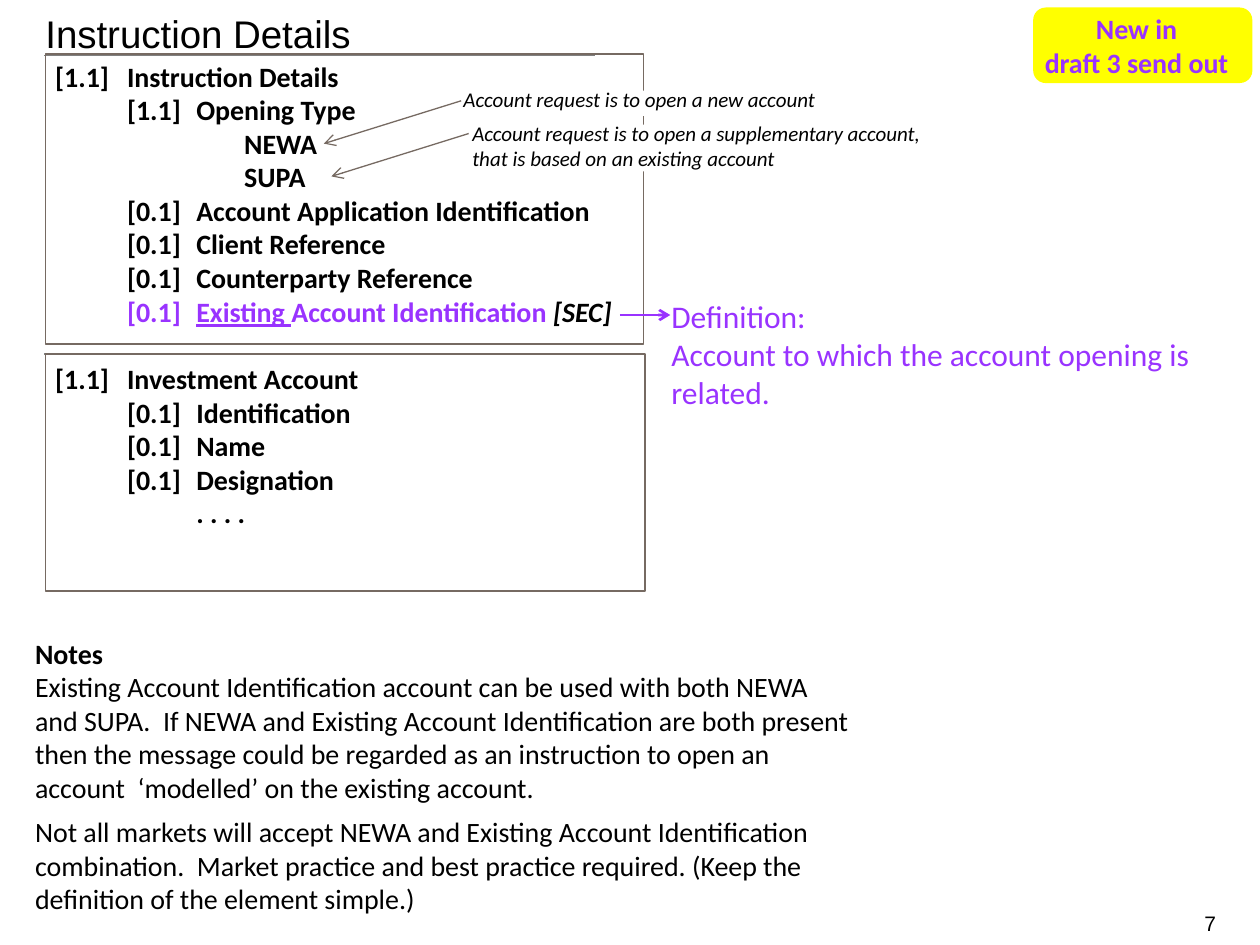
"""Build the Instruction Details slide with its message outline, callouts and notes."""
from dataclasses import dataclass
from typing import Optional

from lxml import etree
from pptx import Presentation
from pptx.dml.color import RGBColor
from pptx.enum.shapes import MSO_CONNECTOR, MSO_SHAPE
from pptx.enum.text import MSO_ANCHOR, PP_ALIGN
from pptx.oxml.ns import qn
from pptx.util import Pt

PX = 9144
BLACK = RGBColor(0, 0, 0)
WHITE = RGBColor(255, 255, 255)
YELLOW = RGBColor(255, 255, 0)
PURPLE = RGBColor(0x99, 0x33, 0xFF)
BROWN = RGBColor(0x76, 0x6A, 0x62)
GREY = RGBColor(0x80, 0x80, 0x80)
RECTANGLE, ROUNDED = MSO_SHAPE.RECTANGLE, MSO_SHAPE.ROUNDED_RECTANGLE
STRAIGHT = MSO_CONNECTOR.STRAIGHT
TOP, MIDDLE = MSO_ANCHOR.TOP, MSO_ANCHOR.MIDDLE
LEFT, CENTER, RIGHT = PP_ALIGN.LEFT, PP_ALIGN.CENTER, PP_ALIGN.RIGHT
TITLE_ONLY = 5
OUTLINE_TABS = (57, 112, 150)


@dataclass(frozen=True)
class Box:
    left: int
    top: int
    width: int
    height: int

    def emu(self) -> tuple[int, ...]:
        return tuple(v * PX for v in (self.left, self.top, self.width, self.height))


@dataclass(frozen=True)
class Style:
    size: int
    color: RGBColor = BLACK
    bold: bool = False
    italic: bool = False
    underline: bool = False
    font: str = "Calibri"


@dataclass(frozen=True)
class Line:
    start: tuple[int, int]
    end: tuple[int, int]
    color: RGBColor
    weight: float = 0.75
    arrow: bool = False


@dataclass(frozen=True)
class Callout:
    text: str
    box: Box
    arrow: Line


ENTRY = Style(16, bold=True)
NEW_ENTRY = Style(16, PURPLE, bold=True)
NOTE = Style(16)
REMARK = Style(12, italic=True)

INSTRUCTION_ENTRIES = (
    "[1.1]\tInstruction Details",
    "\t[1.1]\tOpening Type",
    "\t\t\tNEWA",
    "\t\t\tSUPA",
    "\t[0.1]\tAccount Application Identification",
    "\t[0.1]\tClient Reference",
    "\t[0.1]\tCounterparty Reference",
    "\t[0.1]\t",
)
EXISTING_ACCOUNT = (
    ("Existing ", Style(16, PURPLE, bold=True, underline=True)),
    ("Account Identification ", NEW_ENTRY),
    ("[SEC]", Style(16, bold=True, italic=True)),
)
INVESTMENT_ENTRIES = (
    "[1.1]\tInvestment Account",
    "\t[0.1]\tIdentification",
    "\t[0.1]\tName",
    "\t[0.1]\tDesignation",
    "\t\t. . . .",
)
NOTES = (
    "Notes",
    "Existing Account Identification account can be used with both NEWA and SUPA.  "
    "If NEWA and Existing Account Identification are both present then the message "
    "could be regarded as an instruction to open an account  ‘modelled’ on the "
    "existing account.",
    "Not all markets will accept NEWA and Existing Account Identification combination.  "
    "Market practice and best practice required. (Keep the definition of the element "
    "simple.)",
)
DEFINITION = ("Definition:", "Account to which the account opening is related.")
CALLOUTS = (
    Callout("Account request is to open a new account", Box(358, 64, 376, 30),
            Line((366, 80), (257, 114), BROWN, arrow=True)),
    Callout("Account request is to open a supplementary account, "
            "that is based on an existing account", Box(365, 91, 384, 50),
            Line((372, 106), (263, 140), BROWN, arrow=True)),
)
FRAMES = (Box(36, 43, 475, 230), Box(36, 281, 476, 188))
FRAME_RULES = (Line((35, 44), (472, 44), GREY), Line((35, 281), (461, 281), GREY))
BORDER_GAPS = (Box(496, 72, 27, 20), Box(497, 99, 40, 37))


def format_run(run, style: Style) -> None:
    font = run.font
    font.name, font.size = style.font, Pt(style.size)
    font.bold, font.italic, font.underline = style.bold, style.italic, style.underline
    font.color.rgb = style.color


def write(frame, paragraphs: tuple[str, ...], style: Style,
          align=LEFT, anchor=TOP) -> None:
    frame.word_wrap = True
    frame.vertical_anchor = anchor
    frame.text = "\n".join(paragraphs)
    for paragraph in frame.paragraphs:
        paragraph.alignment = align
        for run in paragraph.runs:
            format_run(run, style)


def add_text(slide, box: Box, paragraphs: tuple[str, ...], style: Style,
             align=LEFT, anchor=TOP):
    frame = slide.shapes.add_textbox(*box.emu()).text_frame
    write(frame, paragraphs, style, align, anchor)
    return frame


def add_outline(slide, box: Box, entries: tuple[str, ...]):
    frame = add_text(slide, box, entries, ENTRY)
    for paragraph in frame.paragraphs:
        tabs = etree.SubElement(paragraph._p.get_or_add_pPr(), qn("a:tabLst"))
        for position in OUTLINE_TABS:
            etree.SubElement(tabs, qn("a:tab"), pos=str(position * PX), algn="l")
    return frame


def add_panel(slide, kind, box: Box, fill: Optional[RGBColor] = None,
              border: Optional[RGBColor] = None):
    panel = slide.shapes.add_shape(kind, *box.emu())
    panel.shadow.inherit = False
    if fill is None:
        panel.fill.background()
    else:
        panel.fill.solid()
        panel.fill.fore_color.rgb = fill
    if border is None:
        panel.line.fill.background()
    else:
        panel.line.color.rgb = border
        panel.line.width = Pt(0.75)
    return panel


def add_line(slide, line: Line) -> None:
    ends = (v * PX for v in line.start + line.end)
    connector = slide.shapes.add_connector(STRAIGHT, *ends)
    connector.line.color.rgb = line.color
    connector.line.width = Pt(line.weight)
    if line.arrow:
        etree.SubElement(connector.line._get_or_add_ln(), qn("a:tailEnd"), type="arrow")
    etree.SubElement(connector._element.spPr, qn("a:effectLst"))


def main() -> None:
    deck = Presentation()
    deck.slide_width, deck.slide_height = 1000 * PX, 750 * PX
    slide = deck.slides.add_slide(deck.slide_layouts[TITLE_ONLY])

    title = slide.shapes.title
    title.left, title.top, title.width, title.height = Box(26, 2, 833, 48).emu()
    write(title.text_frame, ("Instruction Details",), Style(22, font="Arial"),
          anchor=MIDDLE)
    add_text(slide, Box(892, 720, 83, 25), ("7",), Style(12, font="Arial"), RIGHT, MIDDLE)

    for frame, rule in zip(FRAMES, FRAME_RULES):
        add_line(slide, rule)
        add_panel(slide, RECTANGLE, frame, border=BROWN)
    for gap in BORDER_GAPS:
        add_panel(slide, RECTANGLE, gap, WHITE)

    instruction = add_outline(slide, Box(34, 42, 506, 230), INSTRUCTION_ENTRIES)
    existing = instruction.paragraphs[-1]
    format_run(existing.runs[0], NEW_ENTRY)
    for text, style in EXISTING_ACCOUNT:
        run = existing.add_run()
        run.text = text
        format_run(run, style)
    add_outline(slide, Box(34, 282, 506, 147), INVESTMENT_ENTRIES)

    badge = add_panel(slide, ROUNDED, Box(820, 6, 174, 60), YELLOW)
    write(badge.text_frame, ("New in", "draft 3 send out"), NEW_ENTRY, CENTER, MIDDLE)
    badge.text_frame.margin_left = 0

    notes = add_panel(slide, RECTANGLE, Box(18, 500, 671, 234), WHITE).text_frame
    write(notes, NOTES, NOTE)
    notes.paragraphs[0].runs[0].font.bold = True
    notes.paragraphs[1].space_after = Pt(6)

    for callout in CALLOUTS:
        add_text(slide, callout.box, (callout.text,), REMARK)
        add_line(slide, callout.arrow)
    add_text(slide, Box(523, 231, 445, 101), DEFINITION, Style(18, PURPLE))
    add_line(slide, Line((492, 250), (532, 250), PURPLE, 1.5, arrow=True))

    deck.save("out.pptx")


if __name__ == "__main__":
    main()
